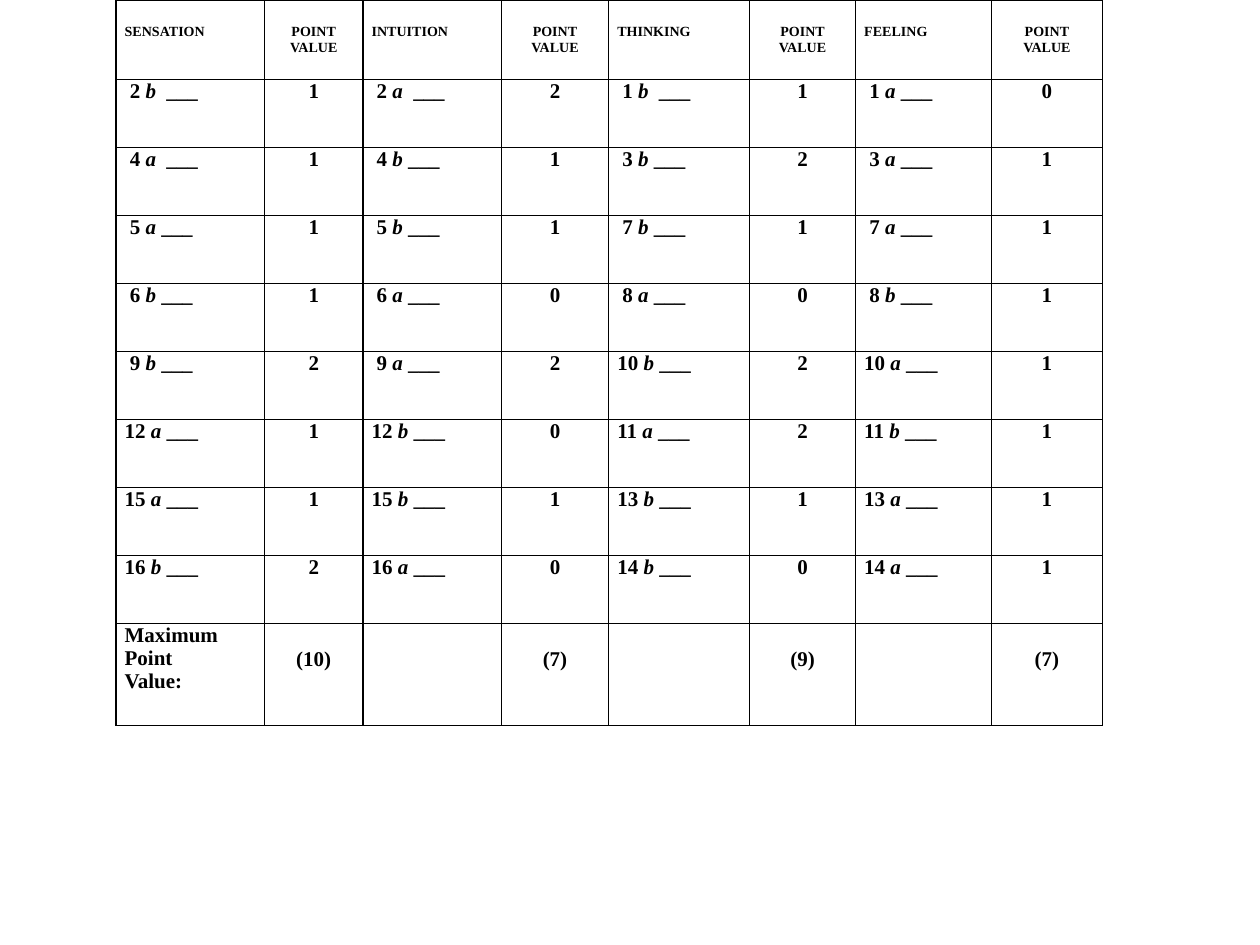
from lxml.etree import SubElement
from pptx import Presentation
from pptx.dml.color import RGBColor
from pptx.enum.text import PP_ALIGN
from pptx.oxml.ns import qn
from pptx.util import Inches, Pt

FONT, INK = "Times New Roman", "000000"
SCALES = ["SENSATION", "INTUITION", "THINKING", "FEELING"]
ANSWERS = [
    [("2", "b", "\t", 1), ("2", "a", "\t", 2), ("1", "b", "\t", 1), ("1", "a", " ", 0)],
    [("4", "a", "\t", 1), ("4", "b", " ", 1), ("3", "b", " ", 2), ("3", "a", " ", 1)],
    [("5", "a", " ", 1), ("5", "b", " ", 1), ("7", "b", " ", 1), ("7", "a", " ", 1)],
    [("6", "b", " ", 1), ("6", "a", " ", 0), ("8", "a", " ", 0), ("8", "b", " ", 1)],
    [("9", "b", " ", 2), ("9", "a", " ", 2), ("10", "b", " ", 2), ("10", "a", " ", 1)],
    [("12", "a", " ", 1), ("12", "b", " ", 0), ("11", "a", " ", 2), ("11", "b", " ", 1)],
    [("15", "a", " ", 1), ("15", "b", " ", 1), ("13", "b", " ", 1), ("13", "a", " ", 1)],
    [("16", "b", " ", 2), ("16", "a", " ", 0), ("14", "b", " ", 0), ("14", "a", " ", 1)],
]
MAXIMUM_LABEL = ["Maximum", "Point", "Value:"]
MAXIMUMS = [10, 7, 9, 7]
COLUMN_WIDTHS = [1.18, 0.78, 1.1, 0.85, 1.12, 0.84, 1.08, 0.88]
ROW_HEIGHTS = [0.63] + [0.54] * len(ANSWERS) + [0.81]
LEFT, TOP = 0.92, 0
SIDE_MARGIN, DIGIT_INDENT, LINE_DROP, BLANK_TAB = 0.07, 0.04, 0.19, 0.29


def colour(value):
    return RGBColor.from_string(value)


def format_cell(cell):
    cell.margin_left = cell.margin_right = Inches(SIDE_MARGIN)
    cell.margin_top = cell.margin_bottom = 0
    properties = cell._tc.get_or_add_tcPr()
    for side in ("lnL", "lnR", "lnT", "lnB"):
        line = SubElement(properties, qn(f"a:{side}"), w=str(Pt(1)))
        fill = SubElement(line, qn("a:solidFill"))
        SubElement(fill, qn("a:srgbClr"), val=INK)
    cell.fill.background()


def add_span(para, text, size, italic=False):
    span = para.add_run()
    span.text = text
    font = span.font
    font.name, font.size, font.bold, font.italic = FONT, Pt(size), True, italic
    font.color.rgb = colour(INK)


def write_lines(cell, lines, size=12, centred=False, drop=0):
    cell.margin_top = Inches(drop)
    frame = cell.text_frame
    for index, line in enumerate(lines):
        para = frame.add_paragraph() if index else frame.paragraphs[0]
        para.alignment = PP_ALIGN.CENTER if centred else PP_ALIGN.LEFT
        add_span(para, line, size)


def write_answer(cell, number, letter, gap):
    if len(number) == 1:
        cell.margin_left = Inches(SIDE_MARGIN + DIGIT_INDENT)
    para = cell.text_frame.paragraphs[0]
    if gap == "\t":
        stops = SubElement(para._p.get_or_add_pPr(), qn("a:tabLst"))
        SubElement(stops, qn("a:tab"), pos=str(Inches(BLANK_TAB)), algn="l")
    add_span(para, f"{number} ", 12)
    add_span(para, letter, 12, italic=True)
    add_span(para, f"{gap}___", 12)


def main():
    """Build the slide with the scoring table for the four scales."""
    deck = Presentation()
    deck.slide_width, deck.slide_height = Inches(10), Inches(7.5)
    page = deck.slides.add_slide(deck.slide_layouts[6])
    table = page.shapes.add_table(
        len(ROW_HEIGHTS), len(COLUMN_WIDTHS), Inches(LEFT), Inches(TOP),
        Inches(sum(COLUMN_WIDTHS)), Inches(sum(ROW_HEIGHTS))).table
    table.first_row = table.horz_banding = False
    for column, width in zip(table.columns, COLUMN_WIDTHS):
        column.width = Inches(width)
    for row, height in zip(table.rows, ROW_HEIGHTS):
        row.height = Inches(height)
    for cell in table.iter_cells():
        format_cell(cell)

    last = len(ROW_HEIGHTS) - 1
    for index, (scale, maximum) in enumerate(zip(SCALES, MAXIMUMS)):
        left, right = 2 * index, 2 * index + 1
        write_lines(table.cell(0, left), [scale], 8, drop=LINE_DROP)
        write_lines(table.cell(0, right), ["POINT", "VALUE"], 8, True, LINE_DROP)
        for row, answers in enumerate(ANSWERS, 1):
            number, letter, gap, points = answers[index]
            write_answer(table.cell(row, left), number, letter, gap)
            write_lines(table.cell(row, right), [str(points)], centred=True)
        write_lines(table.cell(last, right), [f"({maximum})"], centred=True, drop=LINE_DROP)
    write_lines(table.cell(last, 0), MAXIMUM_LABEL)
    deck.save("out.pptx")


if __name__ == "__main__":
    main()
